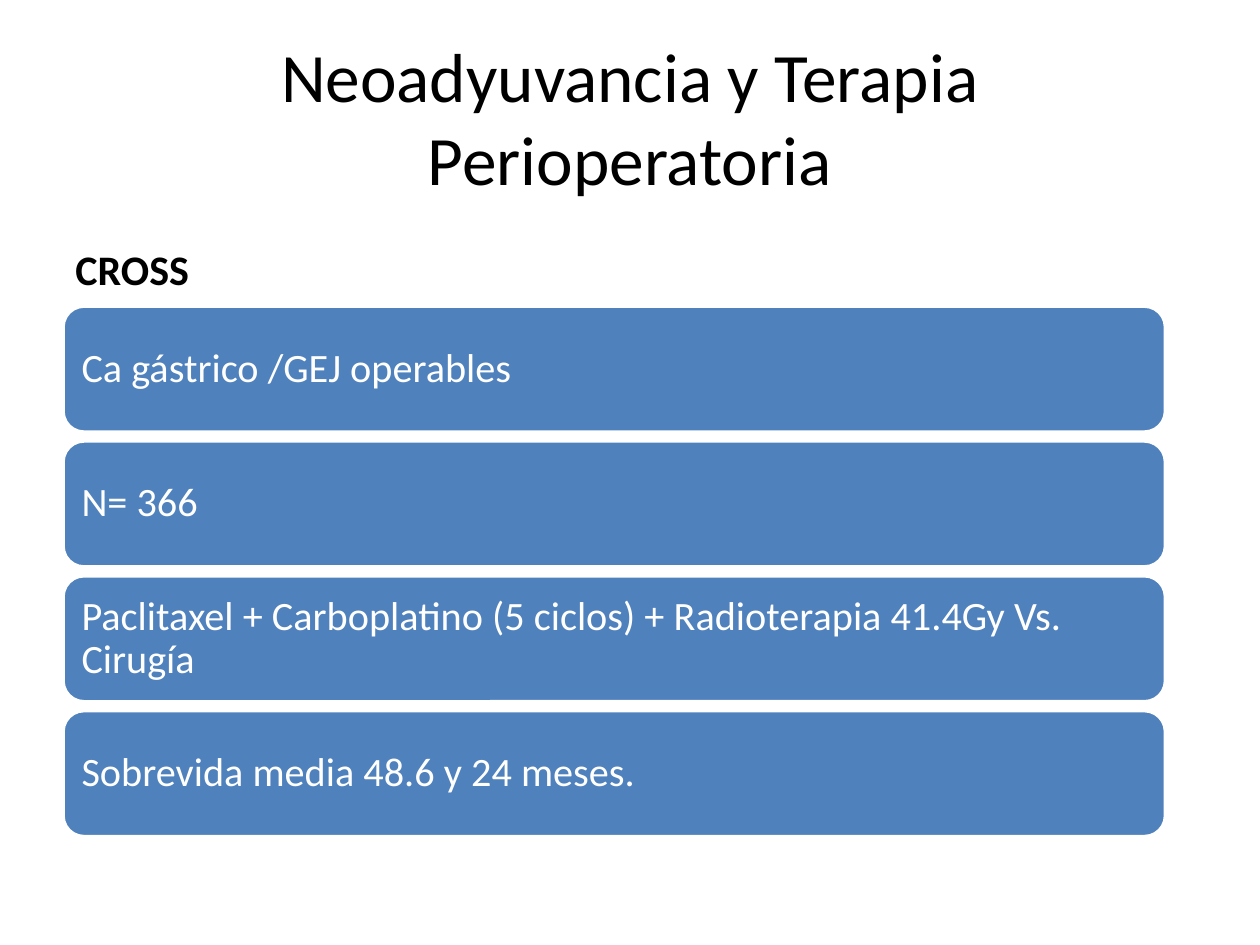
from pptx import Presentation
from pptx.dml.color import RGBColor
from pptx.enum.shapes import MSO_SHAPE as Shape
from pptx.enum.text import MSO_ANCHOR as Anchor, PP_ALIGN as Align
from pptx.util import Inches, Pt

COLORS = {"text": "000000", "card": "4F81BD", "light": "FFFFFF"}


def write(box, text, color, size, bold=False, align=Align.LEFT,
          anchor=Anchor.MIDDLE, side=0.1, edge=0.05, spacing=1.0):
    frame = box.text_frame
    frame_format = {
        "word_wrap": True, "vertical_anchor": anchor,
        "margin_left": Inches(side), "margin_right": Inches(side),
        "margin_top": Inches(edge), "margin_bottom": Inches(edge),
    }
    for name, value in frame_format.items():
        setattr(frame, name, value)
    paragraph = frame.paragraphs[0]
    paragraph.alignment = align
    paragraph.line_spacing = spacing
    run = paragraph.add_run()
    run.text = text
    for name, value in {"name": "Calibri", "size": Pt(size), "bold": bold}.items():
        setattr(run.font, name, value)
    run.font.color.rgb = RGBColor.from_string(COLORS[color])


prs = Presentation()
prs.slide_width, prs.slide_height = Inches(10), Inches(7.5)
slide = prs.slides.add_slide(prs.slide_layouts[6])
shapes = slide.shapes

# Title, with side margins that keep it on two lines
title = shapes.add_textbox(Inches(0.5), Inches(0.3), Inches(9), Inches(1.25))
write(title, "Neoadyuvancia y Terapia Perioperatoria", "text", 39.6,
      align=Align.CENTER, side=0.2)

# Study name
study = shapes.add_textbox(Inches(0.5), Inches(1.68), Inches(4.42), Inches(0.7))
write(study, "CROSS", "text", 24, bold=True, anchor=Anchor.BOTTOM)

# Stacked cards with the study facts
facts = [
    "Ca gástrico /GEJ operables",
    "N= 366",
    "Paclitaxel + Carboplatino (5 ciclos) + Radioterapia 41.4Gy Vs. Cirugía",
    "Sobrevida media 48.6 y 24 meses.",
]
first_top, card_height, gap = 2.43, 1, 0.07
for row, fact in enumerate(facts):
    top = first_top + row * (card_height + gap)
    card = shapes.add_shape(Shape.ROUNDED_RECTANGLE, Inches(0.5), Inches(top),
                            Inches(8.75), Inches(card_height))
    card.shadow.inherit = False
    card.fill.solid()
    card.fill.fore_color.rgb = RGBColor.from_string(COLORS["card"])
    card.line.color.rgb = RGBColor.from_string(COLORS["light"])
    card.line.width = Pt(2)
    write(card, fact, "light", 23, edge=0.1, spacing=0.9)

prs.save("out.pptx")
